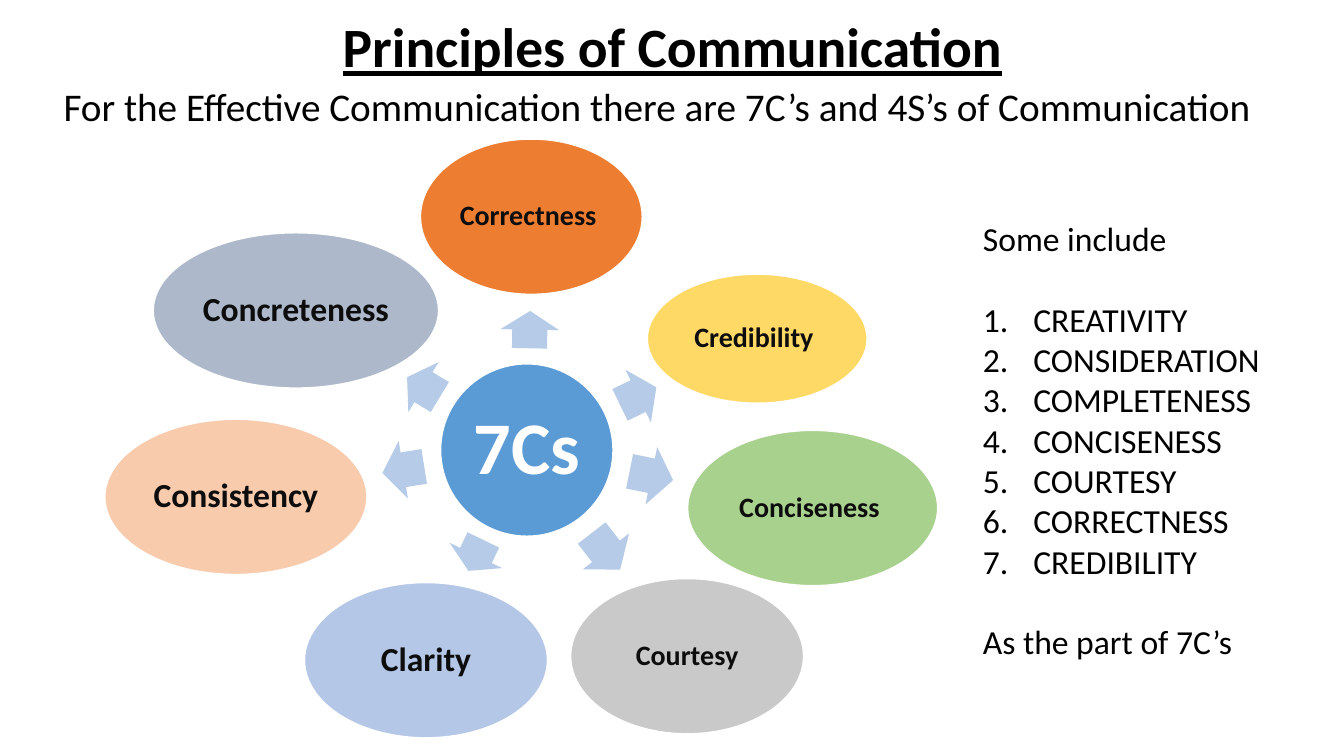
from lxml import etree
from pptx import Presentation
from pptx import util as u
from pptx.dml.color import RGBColor
from pptx.enum import shapes, text
from pptx.oxml.ns import qn

BLACK = RGBColor(0x00, 0x00, 0x00)
WHITE = RGBColor(0xFF, 0xFF, 0xFF)
LABEL = RGBColor(0x0D, 0x0D, 0x0D)
HUB_BLUE = RGBColor(0x5B, 0x9B, 0xD5)
ARROW_BLUE = RGBColor(0xB5, 0xCB, 0xE7)
ORANGE = RGBColor(0xED, 0x7D, 0x31)
YELLOW = RGBColor(0xFF, 0xD9, 0x66)
GREEN = RGBColor(0xA9, 0xD1, 0x8E)
GREY = RGBColor(0xC9, 0xC9, 0xC9)
PERIWINKLE = RGBColor(0xB4, 0xC7, 0xE7)
PEACH = RGBColor(0xF8, 0xCB, 0xAD)
SLATE = RGBColor(0xAD, 0xB9, 0xCA)


def write(para, words, size, color=BLACK, **more):
    para.text = words
    font_format = {"name": "Calibri", "size": u.Pt(size), **more}
    for key, value in font_format.items():
        setattr(para.font, key, value)
    para.font.color.rgb = color


def add_ellipse(frame, fill, words, size, color=LABEL, inset=0.03):
    ellipse = page.shapes.add_shape(
        shapes.MSO_SHAPE.OVAL, *[u.Inches(n) for n in frame])
    ellipse.shadow.inherit = False
    ellipse.fill.solid()
    ellipse.fill.fore_color.rgb = fill
    ellipse.line.color.rgb = WHITE
    ellipse.line.width = u.Pt(1)
    box = ellipse.text_frame
    for side in ("left", "top", "right", "bottom"):
        setattr(box, f"margin_{side}", u.Inches(inset))
    box.vertical_anchor = text.MSO_ANCHOR.MIDDLE
    para = box.paragraphs[0]
    para.alignment = text.PP_ALIGN.CENTER
    para.line_spacing = 0.9
    write(para, words, size, color, bold=True)


deck = Presentation()
deck.slide_width = u.Inches(13.33)
deck.slide_height = u.Inches(7.5)
page = deck.slides.add_slide(deck.slide_layouts[1])

# Title and introduction
title, intro = page.placeholders
for holder, frame in ((title, (0.92, 0.17, 11.5, 0.65)),
                      (intro, (0.53, 0.82, 12.07, 5.93))):
    holder.left, holder.top, holder.width, holder.height = [
        u.Inches(n) for n in frame]
    holder.text_frame.auto_size = text.MSO_AUTO_SIZE.NONE
    holder.text_frame.word_wrap = True

title.text_frame.vertical_anchor = text.MSO_ANCHOR.MIDDLE
para = title.text_frame.paragraphs[0]
para.alignment = text.PP_ALIGN.CENTER
para.line_spacing = 0.9
write(para, "Principles of Communication", 39.6, bold=True, underline=True)

para = intro.text_frame.paragraphs[0]
para.line_spacing = 0.9
para.space_before = u.Pt(0)
properties = para._p.get_or_add_pPr()
properties.set("marL", "0")
properties.set("indent", "0")
etree.SubElement(properties, qn("a:buNone"))
write(para, "For the Effective Communication there are 7C’s and 4S’s of Communication", 28)

# Hub with seven arrows and principles, clockwise from the top
add_ellipse((4.37, 3.61, 1.71, 1.71), HUB_BLUE, "7Cs", 53, WHITE, 0.07)

# label, size, fill, ellipse frame, arrow left, top, width, rotation
principles = [
    ("Correctness ", 20, ORANGE, (4.17, 1.38, 2.2, 1.54), 5.07, 2.98, 0.37, 271),
    ("Credibility ", 20, YELLOW, (6.42, 2.72, 2.18, 1.28), 6.13, 3.64, 0.4, 334.2),
    ("Conciseness ", 20, GREEN, (6.82, 4.27, 2.48, 1.54), 6.24, 4.43, 0.44, 11.5),
    ("Courtesy", 20, GREY, (5.66, 5.74, 2.31, 1.54), 5.78, 5.18, 0.46, 52.2),
    ("Clarity", 24, PERIWINKLE, (3.02, 5.78, 2.41, 1.54), 4.55, 5.22, 0.34, 115.7),
    ("Consistency", 24, PEACH, (1.04, 4.16, 2.6, 1.54), 3.79, 4.37, 0.42, 170.9),
    ("Concreteness", 24, SLATE, (1.52, 2.31, 2.83, 1.54), 4.01, 3.55, 0.38, 211.2),
]
for words, size, fill, frame, left, top, width, rotation in principles:
    arrow = page.shapes.add_shape(
        shapes.MSO_SHAPE.RIGHT_ARROW,
        u.Inches(left), u.Inches(top), u.Inches(width), u.Inches(0.58))
    arrow.rotation = rotation
    arrow.adjustments[0] = 0.6
    arrow.adjustments[1] = 0.5
    arrow.shadow.inherit = False
    arrow.fill.solid()
    arrow.fill.fore_color.rgb = ARROW_BLUE
    arrow.line.fill.background()
    add_ellipse(frame, fill, words, size)

# Numbered list on the right
side_box = page.shapes.add_textbox(
    u.Inches(9.65), u.Inches(2.11), u.Inches(3.11), u.Inches(4.54)).text_frame
side_box.word_wrap = True
write(side_box.paragraphs[0], "Some include", 24)

GAP = u.Pt(29)
names = ["CREATIVITY", "CONSIDERATION", "COMPLETENESS", "CONCISENESS",
         "COURTESY", "CORRECTNESS", "CREDIBILITY"]
for name in names:
    para = side_box.add_paragraph()
    if name == names[0]:
        para.space_before = GAP
    properties = para._p.get_or_add_pPr()
    properties.set("marL", str(u.Inches(0.5)))
    properties.set("indent", str(u.Inches(-0.5)))
    etree.SubElement(properties, qn("a:buAutoNum"), type="arabicPeriod")
    write(para, name, 24)

para = side_box.add_paragraph()
para.space_before = GAP
write(para, "As the part of 7C’s", 24)

deck.save("out.pptx")
